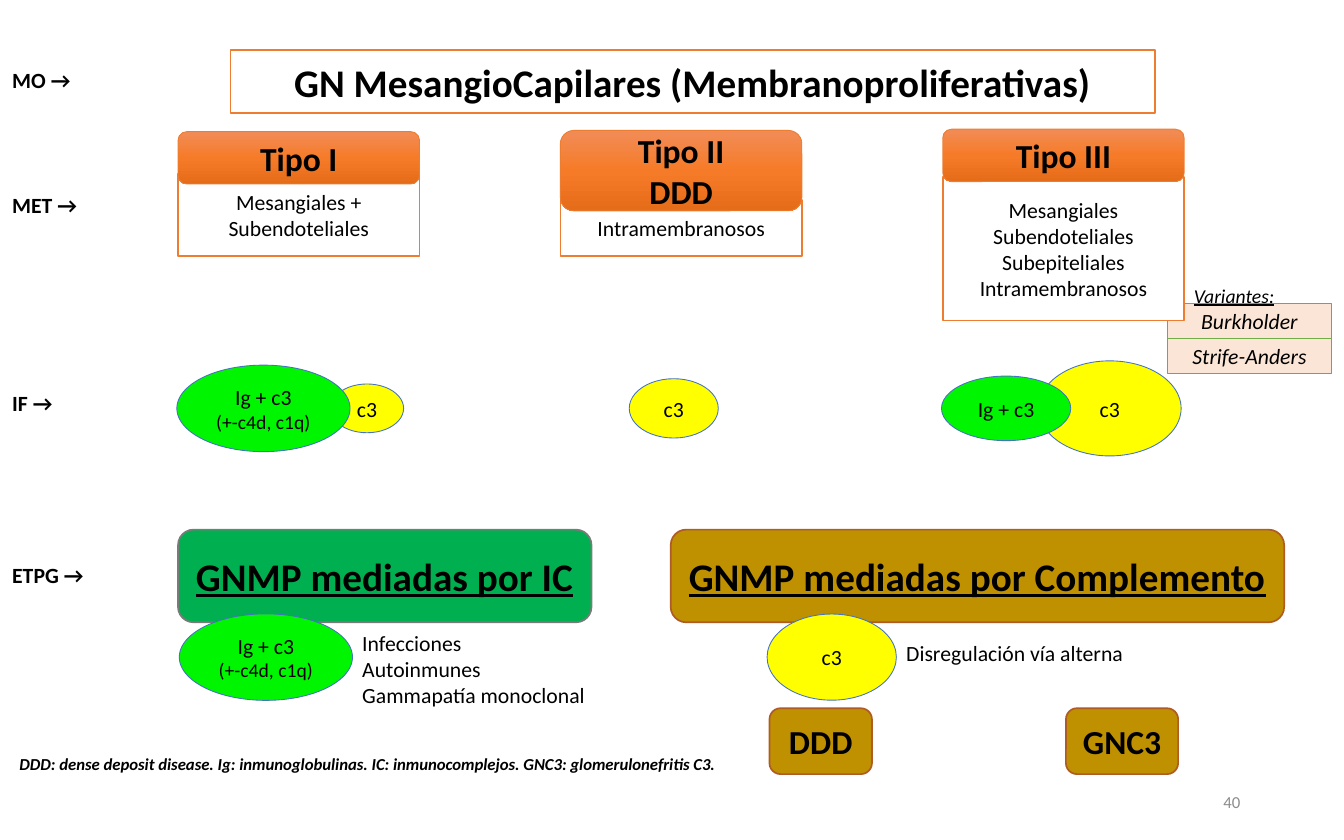
"""Build the slide that classifies mesangiocapillary glomerulonephritis."""
from copy import deepcopy

from pptx import Presentation
from pptx.dml.color import RGBColor
from pptx.enum.shapes import MSO_SHAPE
from pptx.enum.text import MSO_ANCHOR, MSO_AUTO_SIZE, PP_ALIGN
from pptx.oxml import parse_xml
from pptx.oxml.ns import nsdecls, qn
from pptx.util import Inches, Pt

RECT, ROUND, OVAL = MSO_SHAPE.RECTANGLE, MSO_SHAPE.ROUNDED_RECTANGLE, MSO_SHAPE.OVAL
MID, TOP = MSO_ANCHOR.MIDDLE, MSO_ANCHOR.TOP
LEFT, CENTER, RIGHT = PP_ALIGN.LEFT, PP_ALIGN.CENTER, PP_ALIGN.RIGHT
FIXED = MSO_AUTO_SIZE.NONE

WIDE, HIGH = 11.02, 6.89
FIRST, STEP, CARD = 1.46, 3.135, 1.98
COLS = [FIRST + STEP * n for n in range(3)]
IF_ROW, CAUSE_ROW, BOX_ROW = 3.35, 5.39, 5.81
BODY, SMALL, NOTE, HEAD, MAIN = 12.8, 11.6, 9.9, 19.8, 23.1
BLACK, WHITE, ORANGE, BLUE = "000000", "FFFFFF", "ED7D31", "4472C4"
GREEN, YELLOW, GOLD, BROWN = "00F600", "FFFF00", "BF9000", "AF5C24"
SHADES = [(0, "F18C57"), (0.5, "F67B28"), (1, "E56C19")]

TITLE = "GN MesangioCapilares (Membranoproliferativas)"
LABELS = [("MO →", 0.5), ("MET →", 1.53), ("IF →", 3.15), ("ETPG →", 4.56)]
TYPES = [
    (["Tipo I"], 1.08, 0.43, ["Mesangiales + Subendoteliales"], 1.43, 0.67),
    (["Tipo II", "DDD"], 1.07, 0.66, ["Intramembranosos"], 1.64, 0.46),
    (["Tipo III"], 1.06, 0.43,
     ["Mesangiales", "Subendoteliales", "Subepiteliales", "Intramembranosos"],
     1.45, 1.18),
]
VARIANTS = ["Burkholder", "Strife-Anders"]
IMMUNE = ["Ig + c3", "(+-c4d, c1q)"]
OVALS = [
    (["c3"], YELLOW, COLS[0] + 1.55, IF_ROW, 0.6),
    (IMMUNE, GREEN, COLS[0] + 0.7, IF_ROW, 1.42),
    (["c3"], YELLOW, COLS[1] + 0.93, IF_ROW, 0.73),
    (["c3"], YELLOW, COLS[2] + 1.37, IF_ROW, 1.17),
    (["Ig + c3"], GREEN, COLS[2] + 0.52, IF_ROW, 1.06),
    (IMMUNE, GREEN, COLS[0] + 0.72, CAUSE_ROW, 1.42),
    (["c3"], YELLOW, 6.82, CAUSE_ROW, 1.06),
]
GROUPS = [
    ("GNMP mediadas por IC", FIRST, 3.39, "00B050", "7A7A7A"),
    ("GNMP mediadas por Complemento", 5.5, 5.03, GOLD, BROWN),
]
KINDS = [("DDD", 6.31, 0.84), ("GNC3", 8.74, 0.92)]
CAUSES = [
    (["Infecciones", "Autoinmunes", "Gammapatía monoclonal"], 2.88, 5.12, 2.31, 0.75),
    (["Disregulación vía alterna"], 7.34, 5.2, 2.25, 0.32),
]
KEY = ("DDD: dense deposit disease. Ig: inmunoglobulinas. IC: inmunocomplejos. "
       "GNC3: glomerulonefritis C3.")


def tint(code):
    return RGBColor.from_string(code)


def write(shape, lines, sizes, align=CENTER, anchor=MID, color=BLACK, pad=0.09,
          bold=False, italic=False, under=False):
    frame = shape.text_frame
    frame.word_wrap = True
    frame.auto_size = FIXED
    frame.vertical_anchor = anchor
    frame.margin_left = frame.margin_right = Inches(pad)
    frame.margin_top = frame.margin_bottom = Inches(pad / 2)
    for n, line in enumerate(lines):
        para = frame.add_paragraph() if n else frame.paragraphs[0]
        para.alignment = align
        run = para.add_run()
        run.text = line
        font = run.font
        font.name = "Calibri"
        font.size = Pt(sizes[min(n, len(sizes) - 1)])
        font.bold, font.italic, font.underline = bold, italic, under
        font.color.rgb = tint(color)


def paint(shape, fill, edge, weight):
    shape.fill.solid()
    shape.fill.fore_color.rgb = tint(fill)
    shape.line.color.rgb = tint(edge)
    shape.line.width = Pt(weight)


def shade(shape):
    fill = shape.fill
    fill.gradient()
    fill.gradient_angle = 270
    stops = next(shape.element.iter(qn("a:gsLst")))
    stops.insert(1, deepcopy(stops[0]))
    for stop, (place, code) in zip(fill.gradient_stops, SHADES):
        stop.position = place
        stop.color.rgb = tint(code)


def box(slide, form, area, fill, edge, weight, lines, sizes, **style):
    shape = slide.shapes.add_shape(form, *map(Inches, area))
    shape.shadow.inherit = False
    paint(shape, fill, edge, weight)
    write(shape, lines, sizes, **style)
    return shape


def text(slide, area, lines, size, align=LEFT, anchor=TOP, **style):
    shape = slide.shapes.add_textbox(*map(Inches, area))
    write(shape, lines, [size], align, anchor, **style)


def head(slide):
    title = slide.shapes.title
    title.left, title.top = Inches(1.89), Inches(0.41)
    title.width, title.height = Inches(7.58), Inches(0.52)
    title.element.spPr.append(parse_xml(
        f'<a:prstGeom {nsdecls("a")} prst="roundRect"><a:avLst/></a:prstGeom>'))
    paint(title, WHITE, ORANGE, 1)
    write(title, [TITLE], [MAIN], bold=True)


def main():
    deck = Presentation()
    deck.slide_width, deck.slide_height = Inches(WIDE), Inches(HIGH)
    slide = deck.slides.add_slide(deck.slide_layouts[5])
    head(slide)
    for n, name in enumerate(VARIANTS):
        box(slide, RECT, (9.57, 2.49 + 0.285 * n, 1.35, 0.29), "FBE5D6", "70AD47", 0.5,
            [name], [BODY], italic=True, pad=0.04)
    for left, (name, top, tall, sites, low, deep) in zip(COLS, TYPES):
        box(slide, RECT, (left, low, CARD, deep), WHITE, ORANGE, 1, sites, [BODY])
        cap = box(slide, ROUND, (left, top, CARD, tall), ORANGE, ORANGE, 0.5,
                  name, [HEAD], bold=True, pad=0.04)
        shade(cap)
    for name, left, wide, fill, edge in GROUPS:
        box(slide, ROUND, (left, 4.345, wide, 0.76), fill, edge, 1,
            [name], [MAIN], bold=True, under=True, pad=0.05)
    for lines, fill, mid, row, wide in OVALS:
        tall = wide / 2 if fill == GREEN else wide * 2 / 3
        box(slide, OVAL, (mid - wide / 2, row - tall / 2, wide, tall), fill, BLUE, 0.5,
            lines, [BODY, SMALL], pad=0)
    for lines, *area in CAUSES:
        text(slide, area, lines, BODY)
    for name, left, wide in KINDS:
        box(slide, ROUND, (left, BOX_ROW, wide, 0.54), GOLD, BROWN, 1,
            [name], [HEAD], bold=True, pad=0.05)
    for name, top in LABELS:
        text(slide, (0.01, top, 0.9, 0.32), [name], BODY, bold=True)
    text(slide, (9.7, 2.28, 1.06, 0.3), ["Variantes:"], SMALL, italic=True, under=True)
    text(slide, (0.07, 6.14, 6.04, 0.27), [KEY], NOTE, bold=True, italic=True)
    text(slide, (7.78, 6.39, 2.48, 0.37), ["40"], NOTE, RIGHT, MID, color="8C8C8C")
    deck.save("out.pptx")


if __name__ == "__main__":
    main()
